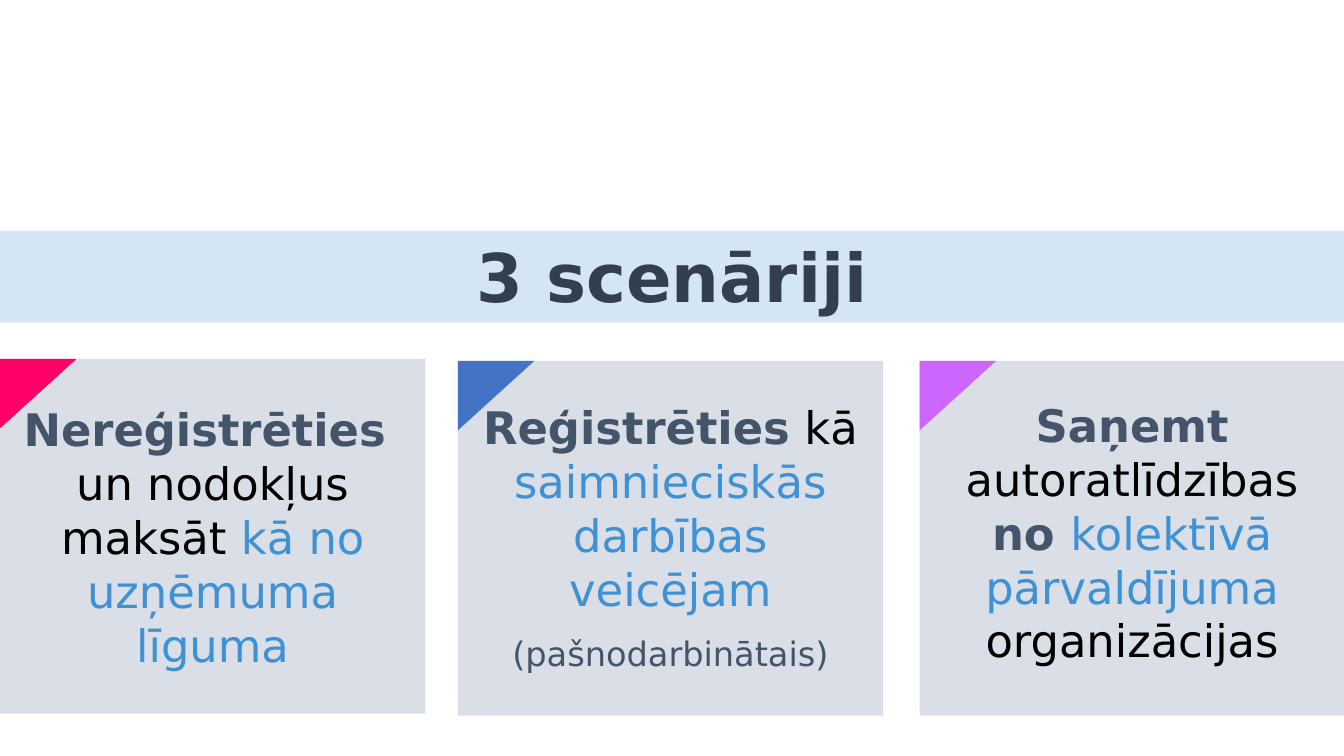
from dataclasses import dataclass

from lxml.etree import SubElement
from pptx import Presentation
from pptx.dml.color import RGBColor
from pptx.enum.shapes import MSO_SHAPE as SHAPE
from pptx.enum.text import MSO_ANCHOR as ANCHOR, PP_ALIGN as ALIGN
from pptx.oxml.ns import qn
from pptx.util import Inches, Pt

FONT = "DejaVu Sans"
BLACK = RGBColor(0x00, 0x00, 0x00)
SLATE = RGBColor(0x44, 0x54, 0x6A)
DARK_SLATE = RGBColor(0x33, 0x3F, 0x50)
BLUE = RGBColor(0x3F, 0x91, 0xD5)
PALE_GREY = RGBColor(0xD6, 0xDC, 0xE5)
PINK = RGBColor(0xFF, 0x00, 0x66)
ROYAL = RGBColor(0x44, 0x72, 0xC4)
VIOLET = RGBColor(0xCC, 0x66, 0xFF)

SLIDE_W, SLIDE_H = 13.33, 7.5
CARD_W, CARD_H = 4.22, 3.52
CORNER_W, CORNER_H = 0.69, 0.76


@dataclass
class Run:
    text: str
    color: RGBColor
    bold: bool = False


@dataclass
class Para:
    runs: list[Run]
    size: float = 32
    space_before: float = 0


@dataclass
class Card:
    left: float
    top: float
    text_top: float
    text_height: float
    accent: RGBColor
    paras: list[Para]


CARDS = [
    Card(0, 3.56, 3.94, 2.79, PINK, [
        Para([Run("Nereģistrēties ", SLATE, True)]),
        Para([Run("un nodokļus maksāt ", BLACK),
              Run("kā no uzņēmuma līguma", BLUE)]),
    ]),
    Card(4.54, 3.58, 3.92, 2.84, ROYAL, [
        Para([Run("Reģistrēties", SLATE, True), Run(" kā ", BLACK),
              Run("saimnieciskās darbības veicējam", BLUE)]),
        Para([Run("(pašnodarbinātais)", SLATE)], size=24, space_before=12.5),
    ]),
    Card(9.12, 3.58, 3.9, 2.79, VIOLET, [
        Para([Run("Saņemt ", SLATE, True), Run("autoratlīdzības ", BLACK),
              Run("no ", SLATE, True), Run("kolektīvā pārvaldījuma ", BLUE),
              Run("organizācijas", BLACK)]),
    ]),
]


def add_block(slide, kind, left: float, top: float, width: float,
              height: float, color: RGBColor, alpha: int = 100):
    """Add a borderless filled shape; alpha is the opacity in percent."""
    sp = slide.shapes.add_shape(kind, Inches(left), Inches(top),
                                Inches(width), Inches(height))
    sp.shadow.inherit = False
    sp.line.fill.background()
    sp.fill.solid()
    sp.fill.fore_color.rgb = color
    if alpha < 100:
        clr = sp._element.spPr.find(qn("a:solidFill"))[0]
        SubElement(clr, qn("a:alpha")).set("val", str(alpha * 1000))
    return sp


def write_text(tf, paras: list[Para]) -> None:
    tf.word_wrap = True
    tf.vertical_anchor = ANCHOR.TOP
    for i, para in enumerate(paras):
        p = tf.paragraphs[0] if i == 0 else tf.add_paragraph()
        p.alignment = ALIGN.CENTER
        p.font.name = FONT
        p.font.size = Pt(para.size)
        if para.space_before:
            p.space_before = Pt(para.space_before)
        for run in para.runs:
            r = p.add_run()
            r.text = run.text
            r.font.color.rgb = run.color
            r.font.bold = run.bold


def add_card_text(slide, card: Card) -> None:
    box = slide.shapes.add_textbox(Inches(card.left), Inches(card.text_top),
                                   Inches(CARD_W), Inches(card.text_height))
    write_text(box.text_frame, card.paras)


def add_corner(slide, card: Card) -> None:
    # A quarter turn puts the right angle in the card's top left corner
    shift = (CORNER_H - CORNER_W) / 2
    sp = add_block(slide, SHAPE.ISOSCELES_TRIANGLE, card.left + shift,
                   card.top - shift, CORNER_W, CORNER_H, card.accent)
    sp.adjustments[0] = 0
    sp.rotation = 90


def main() -> None:
    prs = Presentation()
    prs.slide_width, prs.slide_height = Inches(SLIDE_W), Inches(SLIDE_H)
    slide = prs.slides.add_slide(prs.slide_layouts[6])

    # Card backgrounds
    for card in CARDS:
        add_block(slide, SHAPE.RECTANGLE, card.left, card.top,
                  CARD_W, CARD_H, PALE_GREY, alpha=92)

    # Title band
    band = add_block(slide, SHAPE.RECTANGLE, 0, 2.29, SLIDE_W, 0.91,
                     BLUE, alpha=22)
    write_text(band.text_frame,
               [Para([Run("3 scenāriji", DARK_SLATE, True)], size=48)])

    # Card texts and accent corners
    for card in CARDS:
        add_card_text(slide, card)
    for card in CARDS:
        add_corner(slide, card)

    prs.save("out.pptx")


if __name__ == "__main__":
    main()
